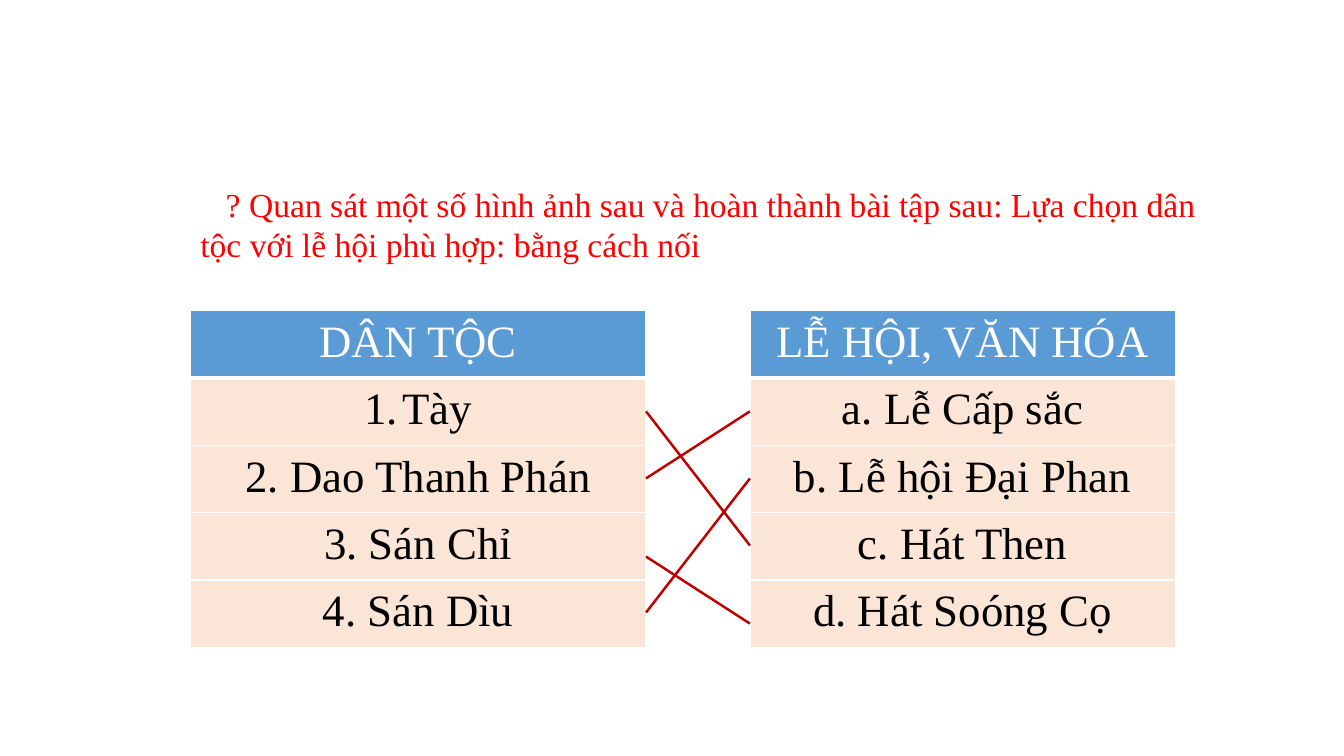
"""Build a matching exercise slide: two one-column tables joined by answer lines."""
from lxml import etree
from pptx import Presentation, util as u
from pptx.dml.color import RGBColor
from pptx.enum import shapes, text
from pptx.oxml.ns import qn

FONT = "Times New Roman"


def rgb(value):
    return RGBColor.from_string(value)


def add_border(tc_pr, side, width):
    ln = etree.SubElement(tc_pr, qn(f"a:ln{side}"), w=str(u.Pt(width)))
    fill = etree.SubElement(ln, qn("a:solidFill"))
    etree.SubElement(fill, qn("a:srgbClr"), val="FFFFFF")


prs = Presentation()
prs.slide_width, prs.slide_height = u.Cm(33.87), u.Cm(19.05)
s = prs.slides.add_slide(prs.slide_layouts[6])

left, top, row_h = 4.8, 7.83, 1.69
left_w, right_x, right_w = 11.48, 18.9, 10.72

question = s.shapes.add_textbox(u.Cm(left), u.Cm(4.5), u.Cm(26.24), u.Cm(2.31))
tf = question.text_frame
tf.word_wrap = True
tf.auto_size = text.MSO_AUTO_SIZE.SHAPE_TO_FIT_TEXT
tf.text = ("? Quan sát một số hình ảnh sau và hoàn thành bài tập sau: "
           "Lựa chọn dân tộc với lễ hội phù hợp: bằng cách nối")
p = tf.paragraphs[0]
p._p.get_or_add_pPr().set("indent", str(u.Cm(0.64)))
r = p.runs[0]
r.font.name, r.font.size = FONT, u.Pt(24)
r.font.color.rgb = rgb("FF0000")

tables = [
    (left, left_w, ["DÂN TỘC", "Tày", "2. Dao Thanh Phán", "3. Sán Chỉ", "4. Sán Dìu"]),
    (right_x, right_w, ["LỄ HỘI, VĂN HÓA", "a. Lễ Cấp sắc", "b. Lễ hội Đại Phan",
                        "c. Hát Then", "d. Hát Soóng Cọ"]),
]
for x, width, labels in tables:
    table = s.shapes.add_table(len(labels), 1, u.Cm(x), u.Cm(top), u.Cm(width),
                               u.Cm(row_h * len(labels))).table
    for i, label in enumerate(labels):
        table.rows[i].height = u.Cm(row_h)
        cell = table.cell(i, 0)
        cell.margin_left = cell.margin_right = u.Cm(0.34)
        cell.margin_top = cell.margin_bottom = u.Cm(0.17)
        tc_pr = cell._tc.get_or_add_tcPr()
        for side in "LRTB":
            add_border(tc_pr, side, 3 if (i, side) in [(0, "B"), (1, "T")] else 1)
        cell.fill.solid()
        cell.fill.fore_color.rgb = rgb("FBE5D6" if i else "5B9BD5")
        cell.text_frame.text = label
        p = cell.text_frame.paragraphs[0]
        p.alignment = text.PP_ALIGN.CENTER
        r = p.runs[0]
        r.font.name, r.font.size, r.font.bold = FONT, u.Pt(32), False
        r.font.color.rgb = rgb("000000" if i else "FFFFFF")
        if label == "Tày":
            p_pr = p._p.get_or_add_pPr()
            p_pr.set("marL", str(u.Cm(0.97)))
            p_pr.set("indent", str(-u.Cm(0.97)))
            etree.SubElement(p_pr, qn("a:buFont"), typeface="+mj-lt")
            etree.SubElement(p_pr, qn("a:buAutoNum"), type="arabicPeriod")

answers = [(1, 3, 0), (2, 1, 0), (3, 4, 0.28), (4, 2, 0)]
for start, end, shift in answers:
    y1, y2 = (top + row_h * (row + 0.5) + shift for row in (start, end))
    line = s.shapes.add_connector(shapes.MSO_CONNECTOR.STRAIGHT, u.Cm(left + left_w),
                                  u.Cm(y1), u.Cm(right_x), u.Cm(y2))
    line.line.color.rgb = rgb("C00000")
    line.line.width = u.Pt(1.75)
    etree.SubElement(line._element.spPr, qn("a:effectLst"))

prs.save("out.pptx")
